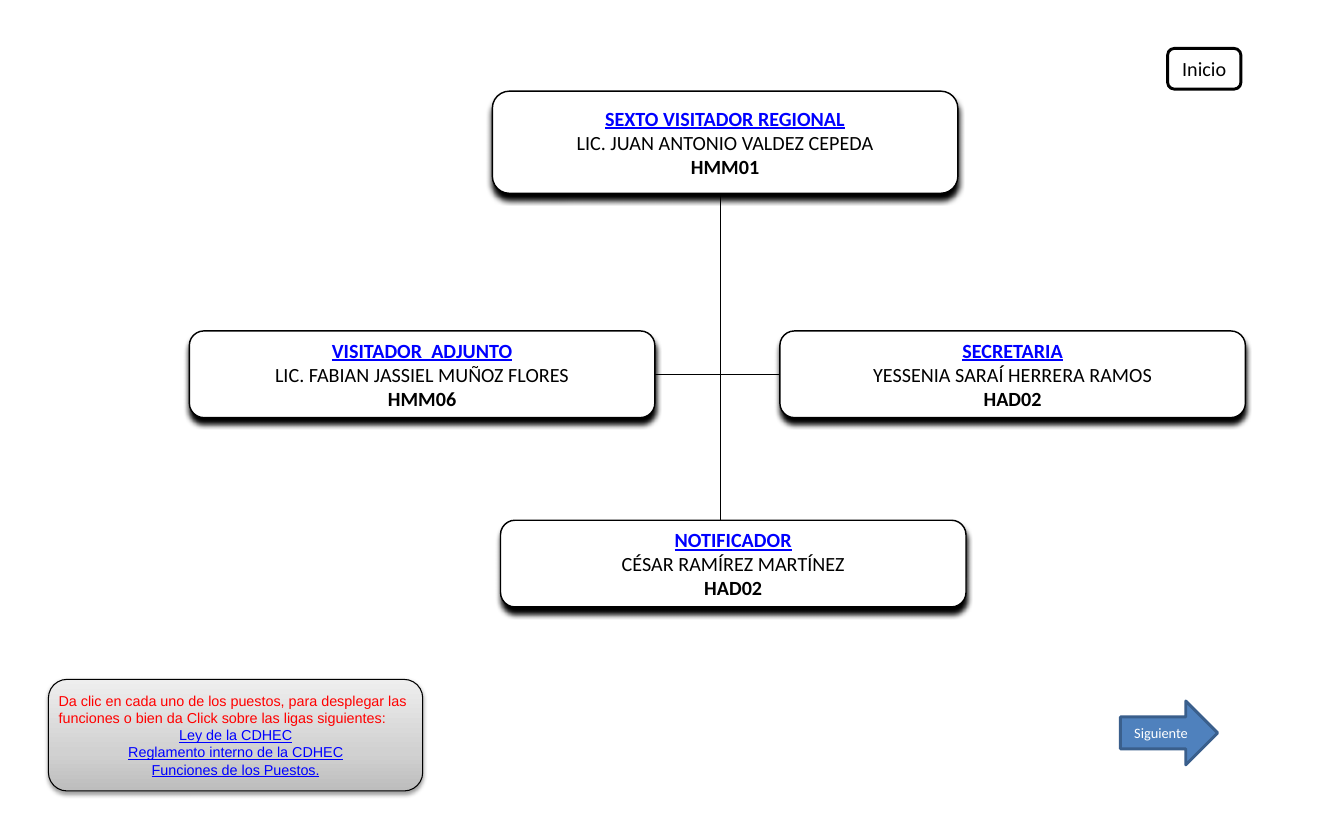
from copy import deepcopy
from dataclasses import dataclass

from lxml.etree import SubElement
from pptx import Presentation
from pptx.dml.color import RGBColor
from pptx.enum.shapes import MSO_CONNECTOR, MSO_SHAPE
from pptx.enum.text import MSO_ANCHOR, MSO_AUTO_SIZE, PP_ALIGN
from pptx.oxml.ns import qn
from pptx.util import Cm, Pt


@dataclass(frozen=True)
class Theme:
    black: str = "000000"
    white: str = "FFFFFF"
    link: str = "0000FF"
    notice: str = "FF0000"
    arrow: str = "4F81BD"
    arrow_line: str = "3A5F8C"
    grays: tuple = ((0, "BDBDBD"), (0.35, "D1D1D1"), (1, "EEEEEE"))
    font: str = "Calibri"
    notice_font: str = "Arial"
    size: int = 14
    small: int = 10


@dataclass(frozen=True)
class Box:
    left: float
    top: float
    width: float
    height: float


@dataclass(frozen=True)
class Post:
    box: Box
    title: str
    person: str
    code: str


@dataclass(frozen=True)
class Line:
    text: str
    color: str
    size: int = 14
    font: str = "Calibri"
    bold: bool = False
    underline: bool = False
    align: PP_ALIGN = PP_ALIGN.CENTER


T = Theme()
POST_W, POST_H, ROW_TOP = 11.43, 2.13, 8.13
STEM_X = 17.7
HEAD = Post(Box(12.09, 2.24, POST_W, 2.51), "SEXTO VISITADOR REGIONAL",
            "LIC. JUAN ANTONIO VALDEZ CEPEDA", "HMM01")
ADJUNCT = Post(Box(4.65, ROW_TOP, POST_W, POST_H), "VISITADOR  ADJUNTO",
               "LIC. FABIAN JASSIEL MUÑOZ FLORES", "HMM06")
SECRETARY = Post(Box(19.15, ROW_TOP, POST_W, POST_H), "SECRETARIA",
                 "YESSENIA SARAÍ HERRERA RAMOS", "HAD02")
NOTIFIER = Post(Box(12.29, 12.78, POST_W, POST_H), "NOTIFICADOR",
                "CÉSAR RAMÍREZ MARTÍNEZ", "HAD02")
PANEL = Box(1.19, 16.69, 9.19, 2.74)
NOTICE = Box(1.19, 16.87, 9.19, 2.39)
HOME = Box(28.67, 1.19, 1.8, 1)
NEXT = Box(27.51, 17.22, 2.39, 1.57)
LINKS = ("Ley de la CDHEC", "Reglamento interno de la CDHEC",
         "Funciones de los Puestos.")


def rgb(value: str) -> RGBColor:
    return RGBColor.from_string(value)


def place(box: Box) -> tuple:
    return Cm(box.left), Cm(box.top), Cm(box.width), Cm(box.height)


def write(sp, lines: list, **frame) -> None:
    tf = sp.text_frame
    for name, value in frame.items():
        setattr(tf, name, value)
    for i, line in enumerate(lines):
        p = tf.paragraphs[0] if i == 0 else tf.add_paragraph()
        p.alignment = line.align
        r = p.add_run()
        r.text = line.text
        fmt = {"name": line.font, "size": Pt(line.size),
               "bold": line.bold, "underline": line.underline}
        for name, value in fmt.items():
            setattr(r.font, name, value)
        r.font.color.rgb = rgb(line.color)


def add_shape(s, kind: MSO_SHAPE, box: Box, fill: str, line: str, width: float):
    sp = s.shapes.add_shape(kind, *place(box))
    sp.shadow.inherit = False
    sp.fill.solid()
    sp.fill.fore_color.rgb = rgb(fill)
    sp.line.color.rgb = rgb(line)
    sp.line.width = Pt(width)
    return sp


def add_shadow(sp, blur: float, dist: float, alpha: int) -> None:
    effects = sp._element.spPr.find(qn("a:effectLst"))
    shadow = SubElement(effects, qn("a:outerShdw"), blurRad=str(Pt(blur)),
                        dist=str(Pt(dist)), dir="5400000", rotWithShape="0")
    color = SubElement(shadow, qn("a:srgbClr"), val=T.black)
    SubElement(color, qn("a:alpha"), val=str(alpha * 1000))


def add_post(s, post: Post):
    sp = add_shape(s, MSO_SHAPE.ROUNDED_RECTANGLE, post.box, T.white, T.black, 1)
    add_shadow(sp, 4, 4, 100)
    write(sp, [Line(post.title, T.link, bold=True, underline=True),
               Line(post.person, T.black),
               Line(post.code, T.black, bold=True)],
          word_wrap=False, vertical_anchor=MSO_ANCHOR.MIDDLE,
          margin_left=Cm(0.43), margin_right=Cm(0.43),
          margin_top=Cm(0.23), margin_bottom=Cm(0.23))
    return sp


def add_line(s, x1: float, y1: float, x2: float, y2: float):
    c = s.shapes.add_connector(MSO_CONNECTOR.STRAIGHT, Cm(x1), Cm(y1), Cm(x2), Cm(y2))
    c.line.color.rgb = rgb(T.black)
    c.line.width = Pt(0.75)
    SubElement(c._element.spPr, qn("a:effectLst"))
    return c


def add_panel(s) -> None:
    sp = add_shape(s, MSO_SHAPE.ROUNDED_RECTANGLE, PANEL, T.white, T.black, 0.75)
    add_shadow(sp, 3.1, 1.6, 38)
    sp.fill.gradient()
    sp.fill.gradient_angle = 90
    stops = sp._element.spPr.find(qn("a:gradFill")).find(qn("a:gsLst"))
    stops.append(deepcopy(stops[0]))
    for stop, (position, color) in zip(sp.fill.gradient_stops, T.grays):
        stop.position = position
        stop.color.rgb = rgb(color)


def main() -> None:
    prs = Presentation()
    prs.slide_width, prs.slide_height = Cm(33), Cm(20.02)
    s = prs.slides.add_slide(prs.slide_layouts[6])

    # Organisation chart
    add_line(s, STEM_X, HEAD.box.top + HEAD.box.height, STEM_X, NOTIFIER.box.top)
    add_post(s, HEAD)
    adjunct, secretary = add_post(s, ADJUNCT), add_post(s, SECRETARY)
    add_post(s, NOTIFIER)
    middle = ROW_TOP + POST_H / 2
    branch = add_line(s, ADJUNCT.box.left + POST_W, middle, SECRETARY.box.left, middle)
    branch.begin_connect(adjunct, 3)
    branch.end_connect(secretary, 1)

    # Instructions
    add_panel(s)
    notice = Line("Da clic en cada uno de los puestos, para desplegar las funciones "
                  "o bien da Click sobre las ligas siguientes:",
                  T.notice, T.small, T.notice_font, align=PP_ALIGN.LEFT)
    links = [Line(text, T.link, T.small, T.notice_font, underline=True) for text in LINKS]
    write(s.shapes.add_textbox(*place(NOTICE)), [notice, *links],
          word_wrap=True, auto_size=MSO_AUTO_SIZE.SHAPE_TO_FIT_TEXT)

    # Navigation buttons
    home = add_shape(s, MSO_SHAPE.ROUNDED_RECTANGLE, HOME, T.white, T.black, 2)
    write(home, [Line("Inicio", T.black)],
          word_wrap=False, vertical_anchor=MSO_ANCHOR.MIDDLE)
    following = add_shape(s, MSO_SHAPE.RIGHT_ARROW, NEXT, T.arrow, T.arrow_line, 2)
    write(following, [Line("Siguiente", T.white, T.small)],
          word_wrap=False, vertical_anchor=MSO_ANCHOR.MIDDLE)

    prs.save("out.pptx")


if __name__ == "__main__":
    main()
